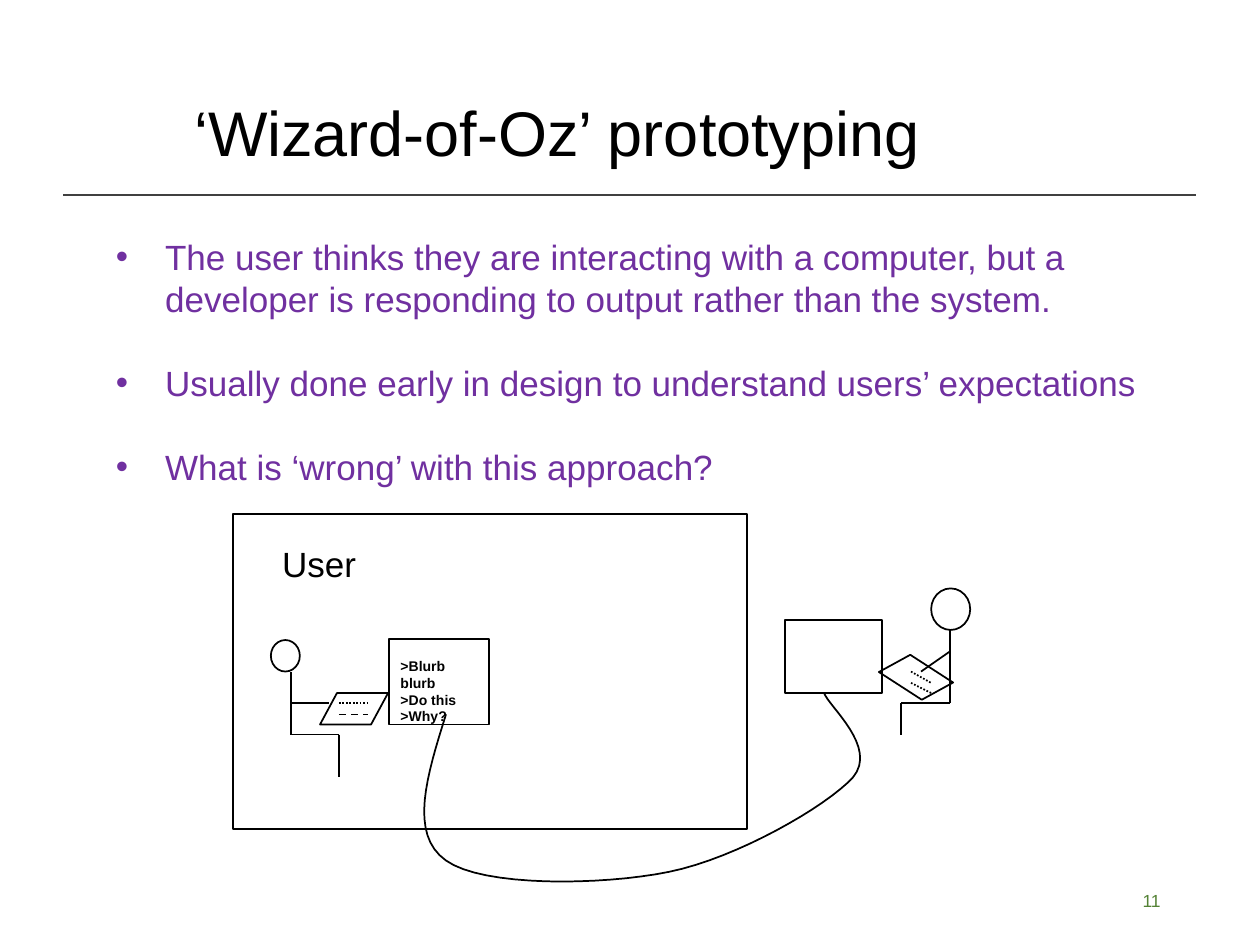
from lxml import etree
from pptx import Presentation
from pptx import util as u
from pptx.dml.color import RGBColor
from pptx.enum import dml, shapes, text
from pptx.oxml.ns import qn

inch = u.Inches


def tint(hue):
    return RGBColor.from_string(hue)


def write(frame, lines, look, hue, fmt):
    frame.text = "\n".join(lines)
    for key, val in look.items():
        setattr(frame, key, val)
    for par in frame.paragraphs:
        for key, val in fmt.items():
            setattr(par, key, val)
        font = par.runs[0].font
        font.name, font.size, font.bold = "Arial", par.font.size, par.font.bold
        font.color.rgb = tint(hue)


deck = Presentation()
deck.slide_width, deck.slide_height = inch(10), inch(7.5)
page = deck.slides.add_slide(deck.slide_layouts[1])
title, body = page.placeholders
for box, spot in ((title, (1.44, 0.76, 6.03, 0.64)), (body, (0.82, 1.82, 8.58, 5.13))):
    box.left, box.top, box.width, box.height = map(inch, spot)

left = text.PP_ALIGN.LEFT
write(title.text_frame, ["‘Wizard-of-Oz’ prototyping"],
      {"word_wrap": False, "vertical_anchor": text.MSO_ANCHOR.MIDDLE}, "000000",
      {"alignment": left, "line_spacing": 0.9, "font.size": None} and
      {"alignment": left, "line_spacing": 0.9})
title.text_frame.paragraphs[0].runs[0].font.size = u.Pt(36)

points = [
    "The user thinks they are interacting with a computer, but a developer is responding to output rather than the system.",
    "Usually done early in design to understand users’ expectations",
    "What is ‘wrong’ with this approach?",
]
write(body.text_frame, points, {"word_wrap": True}, "7030A0",
      {"alignment": left, "space_before": u.Pt(0), "space_after": u.Pt(24),
       "line_spacing": u.Pt(24)})
for par in body.text_frame.paragraphs:
    par.runs[0].font.size = u.Pt(20)
    prop = par._p.get_or_add_pPr()
    prop.set("marL", str(inch(0.39)))
    prop.set("indent", str(inch(-0.39)))

kind = shapes.MSO_SHAPE
figs = [
    (kind.RECTANGLE, (3.09, 5.07, 0.79, 0.68), 0),
    (kind.RECTANGLE, (1.85, 4.08, 4.08, 2.5), 0),
    (kind.RECTANGLE, (6.23, 4.92, 0.77, 0.58), 0),
    (kind.OVAL, (2.15, 5.08, 0.23, 0.25), 0),
    (kind.OVAL, (7.39, 4.67, 0.31, 0.33), 0),
    (kind.PARALLELOGRAM, (2.54, 5.5, 0.54, 0.25), 0),
    (kind.PARALLELOGRAM, (7, 5.25, 0.54, 0.25), 212.9),
]
drawn = []
for form, spot, turn in figs:
    fig = page.shapes.add_shape(form, *map(inch, spot))
    fig.rotation = turn
    if form == kind.PARALLELOGRAM:
        fig.adjustments[0] = 0.54
    drawn.append(fig)

start, *curves = [
    (3.54, 5.67),
    ((3.39, 6.15), (3.24, 6.62), (3.54, 6.83)),
    ((3.83, 7.04), (4.77, 7.03), (5.31, 6.92)),
    ((5.85, 6.81), (6.56, 6.4), (6.77, 6.17)),
    ((6.97, 5.93), (6.58, 5.61), (6.54, 5.5)),
]
steps = 16
cable = []
for one, two, end in curves:
    for num in range(1, steps + 1):
        t = num / steps
        cable.append([inch((1 - t) ** 3 * a + 3 * t * (1 - t) ** 2 * b
                           + 3 * t ** 2 * (1 - t) * c + t ** 3 * d)
                      for a, b, c, d in zip(start, one, two, end)])
    start = end
path = page.shapes.build_freeform(inch(3.54), inch(5.67))
path.add_line_segments(cable, close=False)
drawn.append(path.convert_to_shape())

for fig in drawn:
    fig.shadow.inherit = False
    fig.fill.background()
    fig.line.color.rgb = tint("000000")
    fig.line.width = u.Pt(1)

dash = dml.MSO_LINE
rule = [(0.5, 1.55), (9.49, 1.55)]
user = [(2.31, 5.33), (2.31, 5.83), (2.69, 5.83), (2.69, 6.17)]
wizard = [(7.54, 5), (7.54, 5.58), (7.15, 5.58), (7.15, 5.83)]
strokes = [
    (rule, "404040", None),
    (user, "000000", None),
    ([(2.31, 5.58), (2.61, 5.58)], "000000", None),
    ([(2.69, 5.58), (2.92, 5.58)], "000000", dash.ROUND_DOT),
    ([(2.69, 5.67), (2.92, 5.67)], "000000", dash.DASH),
    (wizard, "000000", None),
    ([(7.54, 5.17), (7.31, 5.33)], "000000", None),
    ([(7.23, 5.33), (7.39, 5.42)], "000000", dash.ROUND_DOT),
    ([(7.23, 5.42), (7.39, 5.5)], "000000", dash.ROUND_DOT),
]
for dots, hue, style in strokes:
    for a, b in zip(dots, dots[1:]):
        line = page.shapes.add_connector(shapes.MSO_CONNECTOR.STRAIGHT, *map(inch, a + b))
        line.line.color.rgb = tint(hue)
        line.line.width = u.Pt(1)
        line.line.dash_style = style
        etree.SubElement(line._element.spPr, qn("a:effectLst"))

top, mid = text.MSO_ANCHOR.TOP, text.MSO_ANCHOR.MIDDLE
notes = [
    ((3.08, 5.17, 0.81, 0.5), [">Blurb blurb", ">Do this", ">Why?"], 8, True, "000000", left, top),
    ((2.14, 4.26, 0.79, 0.44), ["User"], 20, False, "000000", left, top),
    ((7.06, 6.95, 2.25, 0.4), ["11"], 10, False, "548235", text.PP_ALIGN.RIGHT, mid),
]
for spot, lines, size, bold, hue, side, hold in notes:
    frame = page.shapes.add_textbox(*map(inch, spot)).text_frame
    write(frame, lines, {"word_wrap": True, "vertical_anchor": hold}, hue, {"alignment": side})
    for par in frame.paragraphs:
        par.runs[0].font.size, par.runs[0].font.bold = u.Pt(size), bold

deck.save("out.pptx")
